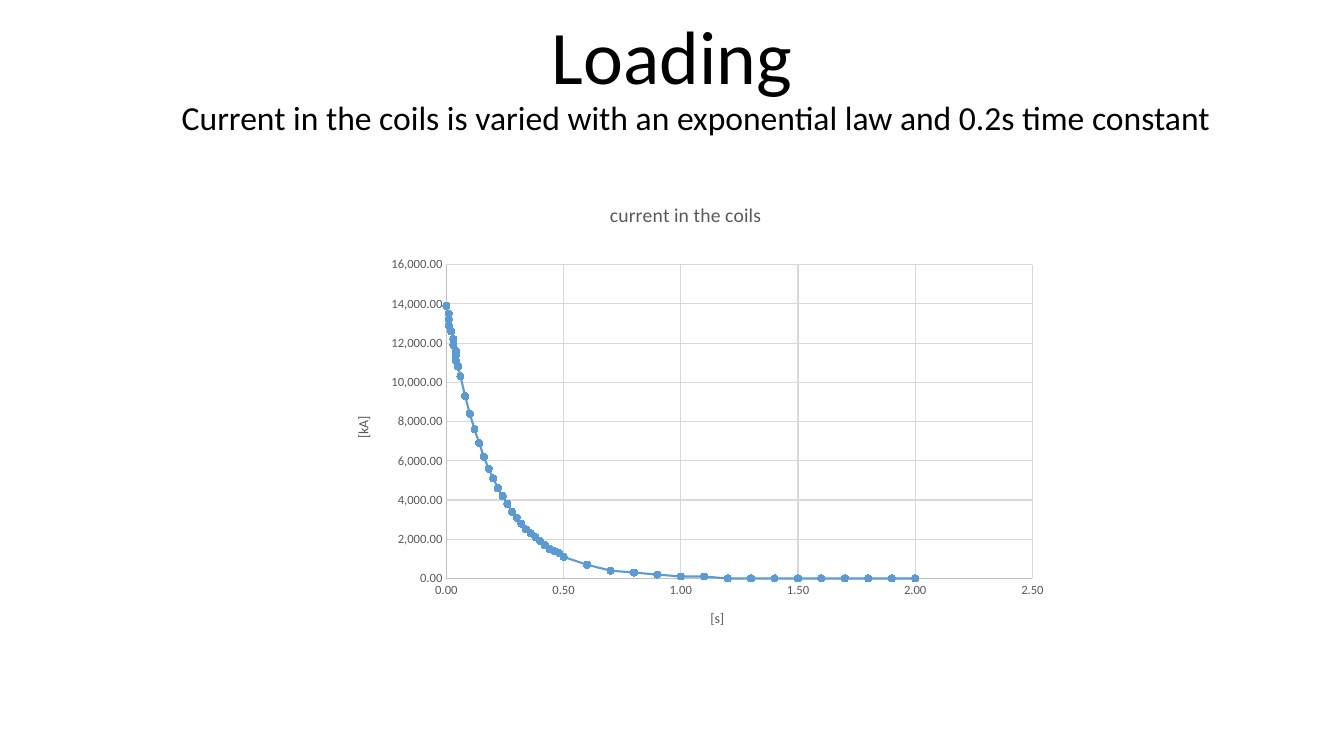
from math import exp

from lxml.etree import SubElement
from pptx import Presentation
from pptx.chart.data import XyChartData
from pptx.dml.color import RGBColor
from pptx.enum.chart import XL_CHART_TYPE, XL_MARKER_STYLE, XL_TICK_LABEL_POSITION, XL_TICK_MARK
from pptx.enum.text import MSO_ANCHOR, PP_ALIGN
from pptx.oxml.ns import qn
from pptx.util import Cm, Pt

# Content
TITLE = "Loading"
SUBTITLE = "Current in the coils is varied with an exponential law and 0.2s time constant"
CHART_TITLE = "current in the coils"
TIME_TITLE, CURRENT_TITLE = "[s]", "[kA]"
INITIAL_CURRENT = 13870
TIME_CONSTANT = 0.2
TIMES = (
    [step * 0.005 for step in range(11)]
    + [step * 0.02 for step in range(3, 26)]
    + [step * 0.1 for step in range(6, 21)]
)

# Style and chart size in centimetres
FONT = "Calibri"
BLACK = RGBColor(0x00, 0x00, 0x00)
GRAY = RGBColor(0x59, 0x59, 0x59)
AXIS_GRAY = RGBColor(0xBF, 0xBF, 0xBF)
GRID_GRAY = RGBColor(0xD9, 0xD9, 0xD9)
BLUE = RGBColor(0x5B, 0x9B, 0xD5)
CHART_WIDTH, CHART_HEIGHT = 18.24, 11.3


def write_text(text_frame, text, size, color=BLACK, spacing=None, before=None):
    paragraph = text_frame.paragraphs[0]
    paragraph.alignment = PP_ALIGN.CENTER
    paragraph.line_spacing = spacing
    paragraph.space_before = before
    run = paragraph.add_run()
    run.text = text
    run.font.name = FONT
    run.font.size = Pt(size)
    run.font.bold = False
    run.font.color.rgb = color


def add_text_box(slide, box, text, size, anchor, before=None):
    shape = slide.shapes.add_textbox(*[Cm(length) for length in box])
    shape.text_frame.word_wrap = True
    shape.text_frame.vertical_anchor = anchor
    write_text(shape.text_frame, text, size, spacing=0.9, before=before)


def set_layout(element, position, **settings):
    """Place a chart part, given in centimetres from the chart's corner."""
    layout = element.find(qn("c:layout"))
    if layout is None:
        layout = element.makeelement(qn("c:layout"), {})
        text = element.find(qn("c:tx"))
        element.insert(0 if text is None else 1, layout)
    manual = SubElement(layout, qn("c:manualLayout"))
    settings.update(xMode="edge", yMode="edge")
    for name, length, total in zip("xywh", position, (CHART_WIDTH, CHART_HEIGHT) * 2):
        settings[name] = length / total
    for name in ("layoutTarget", "xMode", "yMode", "x", "y", "w", "h"):
        if name in settings:
            SubElement(manual, qn(f"c:{name}"), val=str(settings[name]))


def add_title(title, text, size, position):
    write_text(title.text_frame, text, size, GRAY)
    set_layout(title._element, position)


def format_axis(axis, maximum, unit, title, position):
    axis.minimum_scale, axis.maximum_scale, axis.major_unit = 0, maximum, unit
    axis.major_tick_mark = axis.minor_tick_mark = XL_TICK_MARK.NONE
    axis.tick_label_position = XL_TICK_LABEL_POSITION.NEXT_TO_AXIS
    axis.has_major_gridlines = True
    for line, color in ((axis.format.line, AXIS_GRAY), (axis.major_gridlines.format.line, GRID_GRAY)):
        line.color.rgb = color
        line.width = Pt(0.75)
    labels = axis.tick_labels
    labels.number_format = "#,##0.00"
    labels.number_format_is_linked = False
    labels.font.name = FONT
    labels.font.size = Pt(9)
    labels.font.color.rgb = GRAY
    add_title(axis.axis_title, title, 10, position)


def add_current_chart(slide):
    data = XyChartData()
    points = data.add_series("Series 1")
    for time in TIMES:
        current = INITIAL_CURRENT * exp(-time / TIME_CONSTANT)
        points.add_data_point(round(time, 2), int(round(current, -2)))
    chart = slide.shapes.add_chart(
        XL_CHART_TYPE.XY_SCATTER_LINES, Cm(8.43), Cm(4.98), Cm(CHART_WIDTH), Cm(CHART_HEIGHT), data
    ).chart
    chart.has_legend = False
    chart.font.name = FONT
    chart.font.size = Pt(10)
    add_title(chart.chart_title, CHART_TITLE, 14, (6.85, 0))
    format_axis(chart.category_axis, 2.5, 0.5, TIME_TITLE, (9.41, 10.3))
    format_axis(chart.value_axis, 16000, 2000, CURRENT_TITLE, (0.43, 5.45))
    plot_area = chart._chartSpace.chart.plotArea
    set_layout(plot_area, (2.82, 1.69, 14.77, 7.91), layoutTarget="inner")

    # Curve and markers
    chart.plots[0].vary_by_categories = False
    series = chart.plots[0].series[0]
    series.smooth = False
    series.format.line.color.rgb = BLUE
    series.format.line.width = Pt(1.5)
    series.marker.style = XL_MARKER_STYLE.CIRCLE
    series.marker.size = 5
    series.marker.format.fill.solid()
    series.marker.format.fill.fore_color.rgb = BLUE
    series.marker.format.line.color.rgb = BLUE


def main():
    presentation = Presentation()
    presentation.slide_width, presentation.slide_height = Cm(33.87), Cm(19.05)
    slide = presentation.slides.add_slide(presentation.slide_layouts[6])
    add_text_box(slide, (4.23, 1.37, 25.4, 1.3), TITLE, 54, MSO_ANCHOR.BOTTOM)
    add_text_box(slide, (1.84, 2.44, 31.4, 4.6), SUBTITLE, 24, MSO_ANCHOR.TOP, before=Pt(10))
    add_current_chart(slide)
    presentation.save("out.pptx")


if __name__ == "__main__":
    main()
